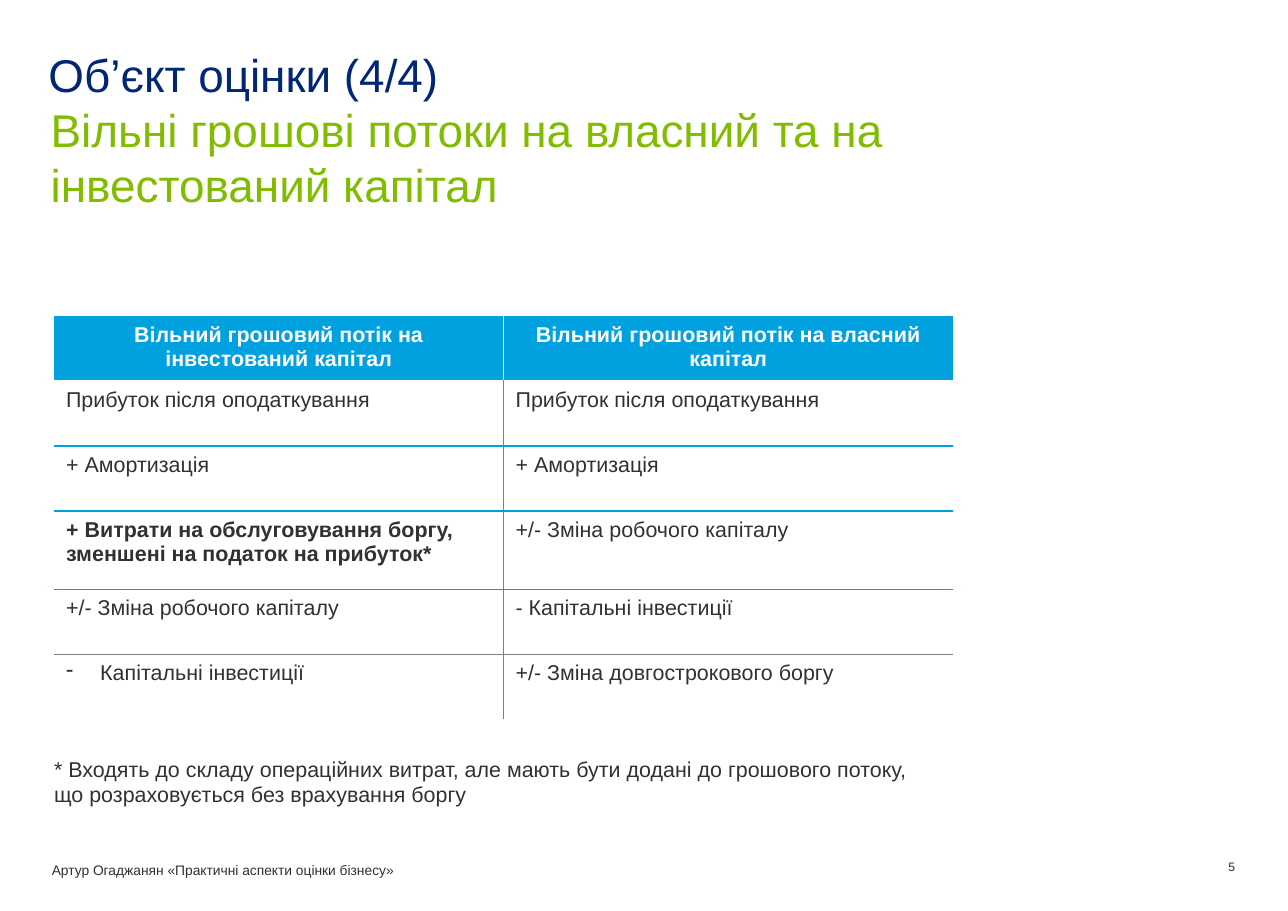
import pptx
import pptx.dml.color
import pptx.enum.text
import pptx.oxml
import pptx.oxml.ns
import pptx.util

RGBColor = pptx.dml.color.RGBColor
ALIGN = pptx.enum.text.PP_ALIGN
ANCHOR = pptx.enum.text.MSO_ANCHOR

NAVY = RGBColor(0x00, 0x27, 0x76)
GREEN = RGBColor(0x81, 0xBC, 0x00)
BLUE = RGBColor(0x00, 0xA1, 0xDE)
DARK = RGBColor(0x31, 0x31, 0x31)
GREY = RGBColor(0x7F, 0x7F, 0x7F)
WHITE = RGBColor(0xFF, 0xFF, 0xFF)

FONT = "Arial"
EMU_PER_PX = 9144  # 100 px to the inch

COLUMN_WIDTH = 408
ROW_HEIGHTS = [59, 59, 59, 71, 59, 59]
CASH_FLOWS = [
    ("Вільний грошовий потік на інвестований капітал",
     "Вільний грошовий потік на власний капітал"),
    ("Прибуток після оподаткування", "Прибуток після оподаткування"),
    ("+ Амортизація", "+ Амортизація"),
    ("+ Витрати на обслуговування боргу, зменшені на податок на прибуток*",
     "+/- Зміна робочого капіталу"),
    ("+/- Зміна робочого капіталу", "- Капітальні інвестиції"),
    ("Капітальні інвестиції", "+/- Зміна довгострокового боргу"),
]
DEBT_COST_CELL = (3, 0)
BULLET_CELL = (5, 0)


def px(length):
    return pptx.util.Emu(length * EMU_PER_PX)


def write(frame, text, size=14, color=DARK, bold=False, align=ALIGN.LEFT, leading=None):
    para = frame.paragraphs[0]
    para.alignment = align
    if leading:
        para.line_spacing = pptx.util.Pt(leading)
    span = para.add_run()
    span.text = text
    span.font.name = FONT
    span.font.size = pptx.util.Pt(size)
    span.font.bold = bold
    span.font.color.rgb = color
    return para


def add_text(page, text, left, top, width, height, anchor=ANCHOR.TOP, **text_format):
    box = page.shapes.add_textbox(px(left), px(top), px(width), px(height))
    frame = box.text_frame
    frame.word_wrap = True
    frame.vertical_anchor = anchor
    frame.margin_left = frame.margin_right = 0
    frame.margin_top = frame.margin_bottom = 0
    write(frame, text, **text_format)


def set_bullet(para, mark, indent):
    properties = para._p.get_or_add_pPr()
    properties.set("marL", str(px(indent)))
    properties.set("indent", str(-px(indent)))
    namespace = pptx.oxml.ns.nsdecls("a")
    properties.append(pptx.oxml.parse_xml(f'<a:buChar {namespace} char="{mark}"/>'))


def set_borders(cell, left=None, right=None, top=None, bottom=None):
    properties = cell._tc.get_or_add_tcPr()
    namespace = pptx.oxml.ns.nsdecls("a")
    sides = {"lnL": left, "lnR": right, "lnT": top, "lnB": bottom}
    for position, (side, color) in enumerate(sides.items()):
        paint = "<a:noFill/>"
        if color is not None:
            paint = f'<a:solidFill><a:srgbClr val="{color}"/></a:solidFill>'
        width = pptx.util.Pt(0.75 if color == GREY else 1)
        line = f'<a:{side} {namespace} w="{width}">{paint}</a:{side}>'
        properties.insert(position, pptx.oxml.parse_xml(line))


def add_cash_flow_table(page, left, top):
    rows, columns = len(CASH_FLOWS), len(CASH_FLOWS[0])
    frame = page.shapes.add_table(rows, columns, px(left), px(top),
                                  px(COLUMN_WIDTH * columns), px(sum(ROW_HEIGHTS)))
    table = frame.table
    table.first_row = table.horz_banding = False
    for column in table.columns:
        column.width = px(COLUMN_WIDTH)
    for row, height in zip(table.rows, ROW_HEIGHTS):
        row.height = px(height)

    # Rules under each row: none below the last, grey above it
    rules = [WHITE] + [BLUE] * (rows - 3) + [GREY, None]
    for r, texts in enumerate(CASH_FLOWS):
        header = r == 0
        divider = WHITE if header else GREY
        for c, text in enumerate(texts):
            cell = table.cell(r, c)
            cell.margin_left = cell.margin_right = px(11)
            cell.margin_top = cell.margin_bottom = px(6)
            cell.fill.solid()
            cell.fill.fore_color.rgb = BLUE if header else WHITE
            para = write(cell.text_frame, text,
                         color=WHITE if header else DARK,
                         bold=header or (r, c) == DEBT_COST_CELL,
                         align=ALIGN.CENTER if header else ALIGN.LEFT)
            if (r, c) == BULLET_CELL:
                set_bullet(para, "-", 31)
            set_borders(cell,
                        left=divider if c > 0 else None,
                        right=divider if c < columns - 1 else None,
                        top=None if header else rules[r - 1],
                        bottom=rules[r])


def main():
    deck = pptx.Presentation()
    deck.slide_width, deck.slide_height = px(1169), px(827)
    page = deck.slides.add_slide(deck.slide_layouts[6])

    # Headings
    add_text(page, "Об’єкт оцінки (4/4)", 44, 42, 745, 50,
             size=30, color=NAVY, leading=36)
    add_text(page, "Вільні грошові потоки на власний та на інвестований капітал",
             46, 92, 818, 101, size=30, color=GREEN, leading=36)

    # Comparison of cash flows
    add_cash_flow_table(page, 49, 287)
    add_text(page, "* Входять до складу операційних витрат, але мають бути додані "
                   "до грошового потоку, що розраховується без врахування боргу",
             49, 686, 781, 35)

    # Footer
    add_text(page, "Артур Огаджанян «Практичні аспекти оцінки бізнесу»",
             47, 776, 869, 28, anchor=ANCHOR.MIDDLE, size=9)
    add_text(page, "5", 1020, 772, 101, 30, anchor=ANCHOR.MIDDLE,
             size=8, align=ALIGN.RIGHT)

    deck.save("out.pptx")


if __name__ == "__main__":
    main()
